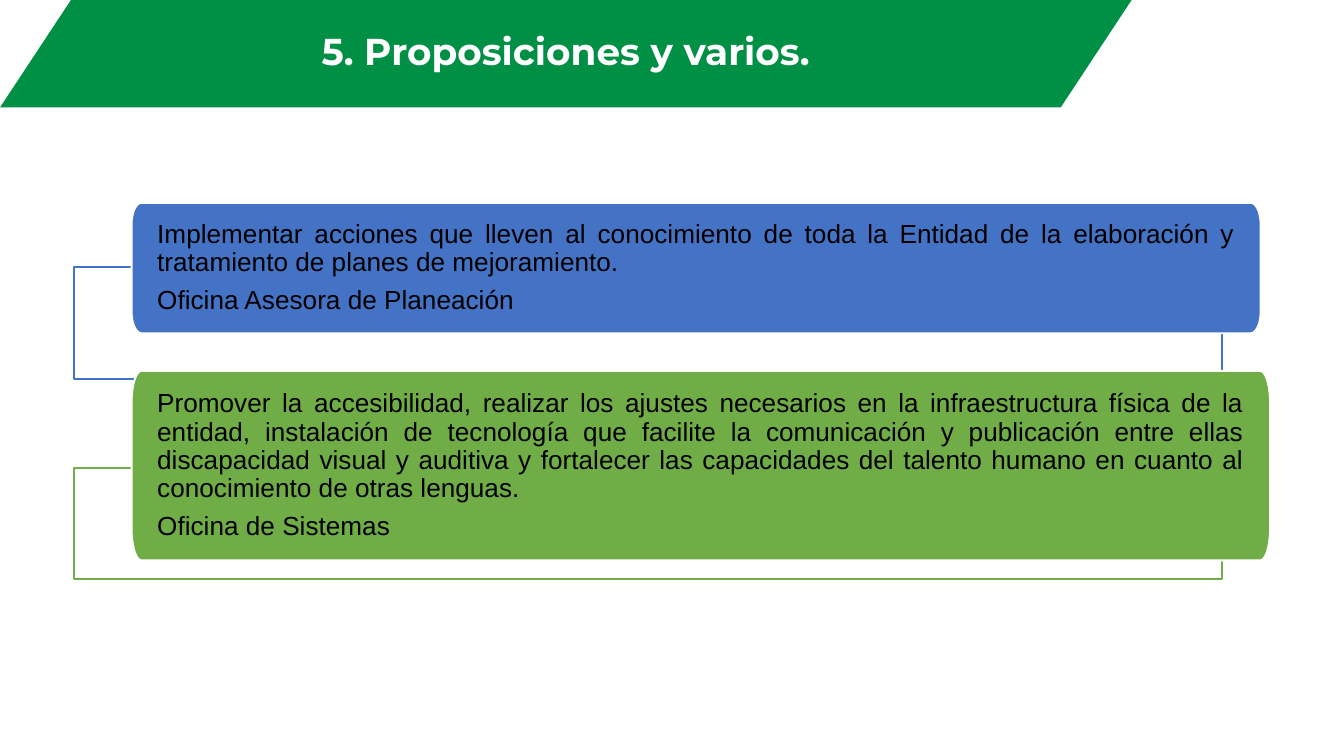
from math import cos, sin, radians
from lxml.etree import SubElement
from pptx import Presentation
from pptx.dml.color import RGBColor
from pptx.enum.shapes import MSO_SHAPE
from pptx.enum.text import MSO_ANCHOR, PP_ALIGN
from pptx.oxml.ns import qn
from pptx.util import Inches, Pt

GREEN = RGBColor(0x00, 0x90, 0x45)
BLUE = RGBColor(0x44, 0x72, 0xC4)
LIME = RGBColor(0x70, 0xAD, 0x47)
WHITE = RGBColor(0xFF, 0xFF, 0xFF)
BLACK = RGBColor(0x00, 0x00, 0x00)


def write(sp, paragraphs, font, size, color, align, inset, bold=False, after=0):
    tf = sp.text_frame
    tf.word_wrap = True
    tf.vertical_anchor = MSO_ANCHOR.MIDDLE
    tf.margin_left = tf.margin_right = Inches(inset[0])
    tf.margin_top = tf.margin_bottom = Inches(inset[1])
    for i, text in enumerate(paragraphs):
        p = tf.paragraphs[0] if i == 0 else tf.add_paragraph()
        p.alignment = align
        p.line_spacing = 0.9
        p.space_after = Pt(after)
        r = p.add_run()
        r.text = text
        r.font.name = font
        r.font.size = Pt(size)
        r.font.bold = bold
        r.font.color.rgb = color


prs = Presentation()
prs.slide_width = Inches(10)
prs.slide_height = Inches(10) * 9 // 16
s = prs.slides.add_slide(prs.slide_layouts[6])

title = s.shapes.add_shape(MSO_SHAPE.PARALLELOGRAM, 0, 0, Inches(8.42), Inches(0.8))
title.adjustments[0] = 0.66
title.shadow.inherit = False
title.fill.solid()
title.fill.fore_color.rgb = GREEN
title.line.fill.background()
write(title, ["5. Proposiciones y varios."], font="Montserrat", size=20, color=WHITE,
      align=PP_ALIGN.CENTER, inset=(0.07, 0.04), bold=True)

proposals = [
    (BLUE, 1.99, 1.51, 8.4, 0.97, [
        "Implementar acciones que lleven al conocimiento de toda la Entidad de la elaboración y "
        "tratamiento de planes de mejoramiento.",
        "Oficina Asesora de Planeación"]),
    (LIME, 3.48, 2.76, 8.47, 1.41, [
        "Promover la accesibilidad, realizar los ajustes necesarios en la infraestructura física "
        "de la entidad, instalación de tecnología que facilite la comunicación y publicación entre "
        "ellas discapacidad visual y auditiva y fortalecer las capacidades del talento humano en "
        "cuanto al conocimiento de otras lenguas.",
        "Oficina de Sistemas"]),
]
left = 0.98

for color, frame_top, top, width, height, paragraphs in proposals:
    frame = s.shapes.add_shape(MSO_SHAPE.RECTANGLE, Inches(0.55), Inches(frame_top),
                               Inches(8.54), Inches(0.83))
    frame.shadow.inherit = False
    frame.fill.solid()
    frame.fill.fore_color.rgb = WHITE
    frame_color = frame.element.spPr.find(qn("a:solidFill")).find(qn("a:srgbClr"))
    SubElement(frame_color, qn("a:alpha"), val="90000")
    frame.line.color.rgb = color
    frame.line.width = Pt(1)

    rx, ry = width / 115, height / 6
    corners = [(left + rx, top + ry, 180), (left + width - rx, top + ry, 270),
               (left + width - rx, top + height - ry, 0), (left + rx, top + height - ry, 90)]
    points = [(Inches(cx + rx * cos(radians(start + step))),
               Inches(cy + ry * sin(radians(start + step))))
              for cx, cy, start in corners for step in range(0, 91, 10)]
    fb = s.shapes.build_freeform(*points[0])
    fb.add_line_segments(points[1:], close=True)
    card = fb.convert_to_shape()
    card.shadow.inherit = False
    card.fill.solid()
    card.fill.fore_color.rgb = color
    card.line.color.rgb = WHITE
    card.line.width = Pt(1)
    write(card, paragraphs, font="Arial", size=14, color=BLACK,
          align=PP_ALIGN.JUSTIFY, inset=(0.19, 0.01), after=5)

prs.save("out.pptx")
